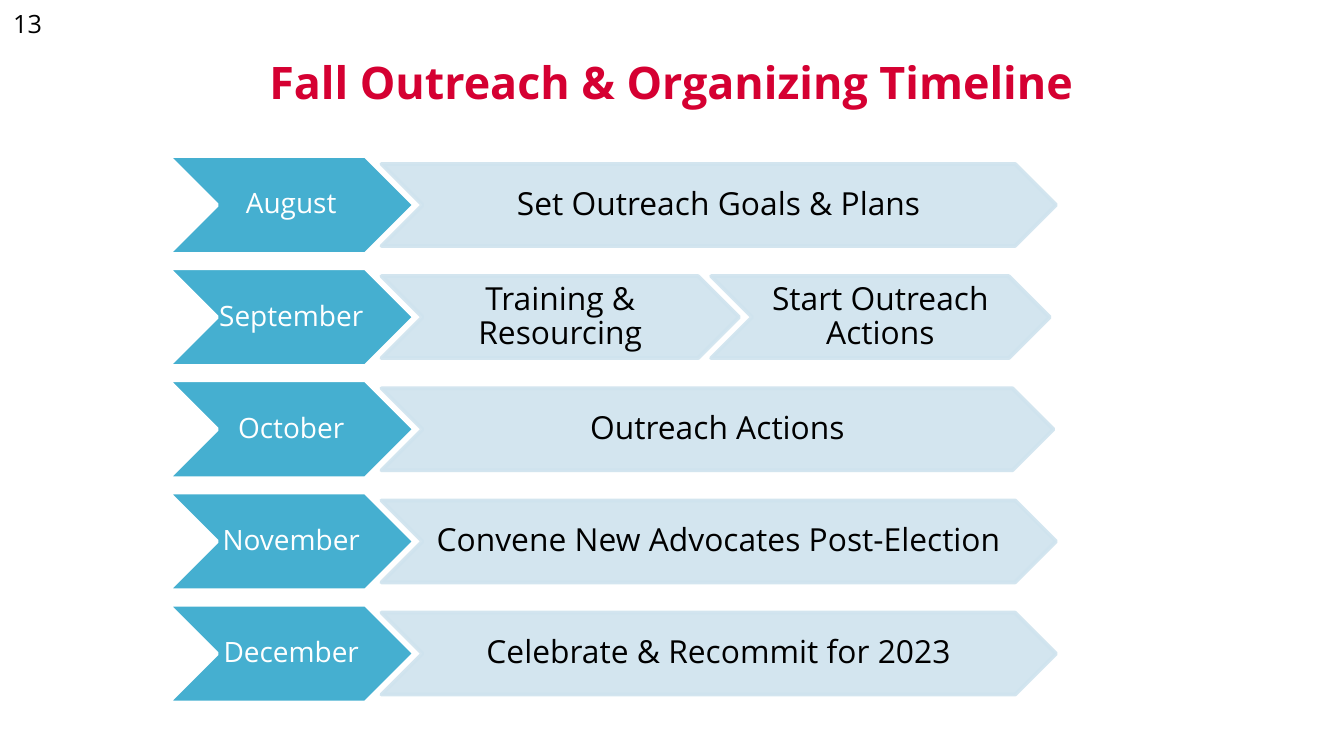
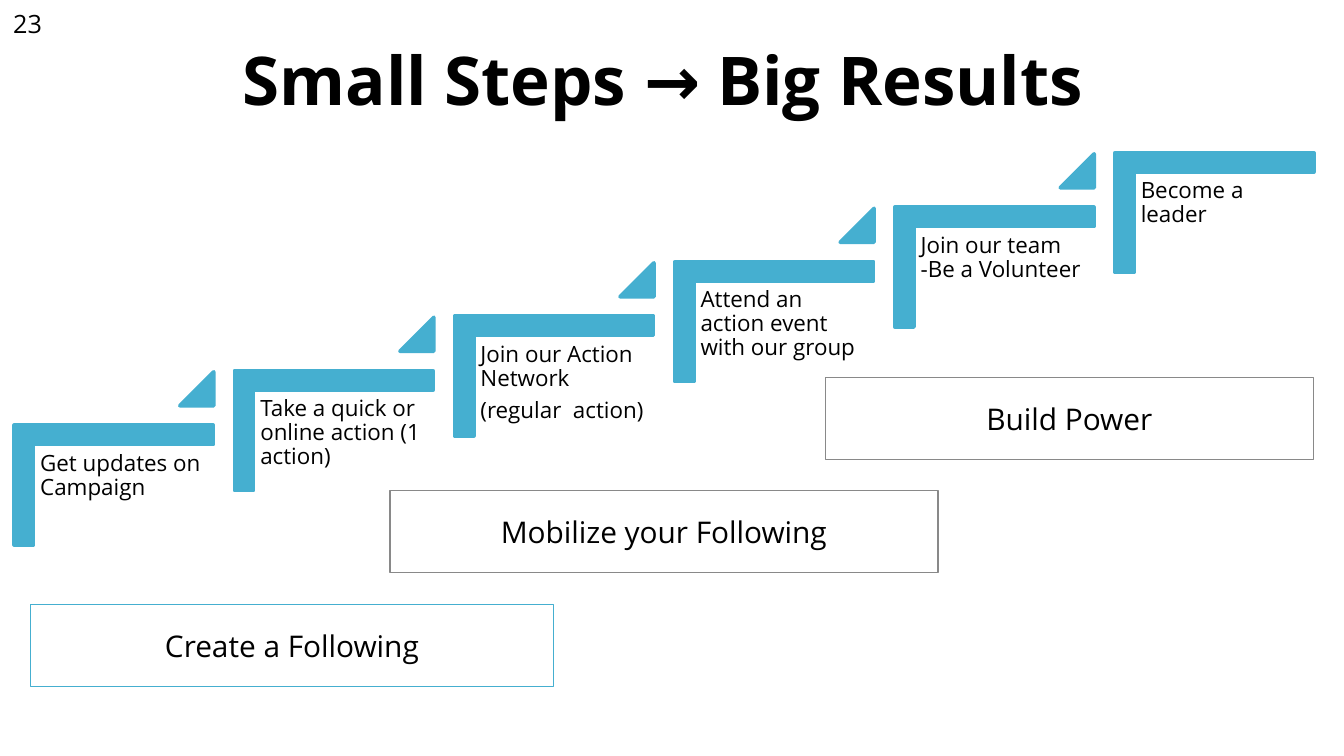
"""Build two slides: an outreach timeline and a staircase of engagement steps."""
from typing import NamedTuple

from lxml import etree
from pptx import Presentation
from pptx.dml.color import RGBColor
from pptx.enum.shapes import MSO_SHAPE
from pptx.enum.text import MSO_ANCHOR, PP_ALIGN
from pptx.oxml.ns import qn
from pptx.util import Cm, Pt

CHEVRON, CORNER = MSO_SHAPE.CHEVRON, MSO_SHAPE.CORNER
TRIANGLE, RECTANGLE = MSO_SHAPE.ISOSCELES_TRIANGLE, MSO_SHAPE.RECTANGLE
TOP, MIDDLE = MSO_ANCHOR.TOP, MSO_ANCHOR.MIDDLE
LEFT, CENTER = PP_ALIGN.LEFT, PP_ALIGN.CENTER

FONT = "Open Sans"
BLACK, WHITE, RED = "000000", "FFFFFF", "D50032"
BLUE, PALE_BLUE, GRAY = "45AFD0", "CFE3EE", "898989"
DEFAULT_INSETS = (0.25, 0.13, 0.25, 0.13)
CHEVRON_INSETS = (0, 0.03, 0, 0.03)
STEP_INSETS = (0.12, 0.12, 0.12, 0.12)


class Box(NamedTuple):
    """A rectangle in centimetres."""

    left: float
    top: float
    width: float
    height: float


class Activity(NamedTuple):
    """One activity of a month, with the width of its chevron."""

    label: str
    width: float


class Month(NamedTuple):
    """One row of the timeline."""

    name: str
    activities: tuple[Activity, ...]


class Stage(NamedTuple):
    """A framed caption below the staircase."""

    label: str
    box: Box
    line: str


MONTHS = (
    Month("August", (Activity("Set Outreach Goals & Plans", 12.75),)),
    Month("September", (Activity("Training & Resourcing", 6.76),
                        Activity("Start Outreach Actions", 6.4))),
    Month("October", (Activity("Outreach Actions", 12.7),)),
    Month("November", (Activity("Convene New Advocates Post-Election", 12.75),)),
    Month("December", (Activity("Celebrate & Recommit for 2023", 12.75),)),
)
STEPS = (
    "Get updates on Campaign",
    "Take a quick or online action (1 action)",
    "Join our Action Network\n(regular  action)",
    "Attend an action event with our group",
    "Join our team -Be a Volunteer",
    "Become a leader",
)
STAGES = (
    Stage("Create a Following", Box(0.58, 11.43, 9.88, 1.55), BLUE),
    Stage("Mobilize your Following", Box(7.37, 9.27, 10.36, 1.55), GRAY),
    Stage("Build Power", Box(15.6, 7.14, 9.22, 1.55), GRAY),
)


def rgb(value: str) -> RGBColor:
    """Turn a hex string into a colour."""
    return RGBColor.from_string(value)


def write_text(shape, text: str, *, size: float, color: str = BLACK, bold: bool = False,
               align=CENTER, anchor=MIDDLE, insets=DEFAULT_INSETS,
               line_spacing: float | None = None, space_after: float = 0) -> None:
    """Fill a shape with formatted text, one paragraph a line."""
    frame = shape.text_frame
    frame.word_wrap = True
    frame.vertical_anchor = anchor
    (frame.margin_left, frame.margin_top,
     frame.margin_right, frame.margin_bottom) = map(Cm, insets)
    frame.text = text
    for paragraph in frame.paragraphs:
        paragraph.alignment = align
        paragraph.line_spacing = line_spacing
        paragraph.space_after = Pt(space_after)
        font = paragraph.font
        font.name, font.size, font.bold = FONT, Pt(size), bold
        font.color.rgb = rgb(color)


def add_text(slide, box: Box, text: str, **text_format) -> None:
    """Add a text box."""
    write_text(slide.shapes.add_textbox(*map(Cm, box)), text, **text_format)


def add_outline(slide, kind, box: Box, *, fill: str | None, line: str,
                line_width: float = 2, opacity: int = 100):
    """Add a preset shape with its fill and line."""
    shape = slide.shapes.add_shape(kind, *map(Cm, box))
    shape.shadow.inherit = False
    if fill:
        shape.fill.solid()
        shape.fill.fore_color.rgb = rgb(fill)
    else:
        shape.fill.background()
    shape.line.color.rgb = rgb(line)
    shape.line.width = Pt(line_width)
    if opacity < 100:
        for color in shape.element.spPr.iter(qn("a:srgbClr")):
            etree.SubElement(color, qn("a:alpha"), val=str(opacity * 1000))
    return shape


def add_chevron(slide, box: Box, label: str, *, fill: str, line: str, opacity: int,
                size: float, color: str) -> None:
    """Add a chevron with its label between the two points."""
    add_outline(slide, CHEVRON, box, fill=fill, line=line, opacity=opacity)
    label_box = Box(box.left + box.height / 2, box.top, box.width - box.height, box.height)
    add_text(slide, label_box, label, size=size, color=color,
             insets=CHEVRON_INSETS, line_spacing=0.9)


def add_slide(presentation, number: int):
    """Add a blank slide with its page number."""
    slide = presentation.slides.add_slide(presentation.slide_layouts[6])
    add_text(slide, Box(0, 0.03, 1.14, 0.84), str(number), size=13.5, align=LEFT, anchor=TOP)
    return slide


def add_title(slide, left: float, top: float, text: str, size: float, color: str) -> None:
    """Add a bold centred title."""
    add_text(slide, Box(left, top, 21.87, 1.55), text, size=size, color=color, bold=True)


def build_timeline(presentation) -> None:
    """Build the slide with a row of chevrons for each month."""
    slide = add_slide(presentation, 13)
    add_title(slide, 1.75, 0.76, "Fall Outreach & Organizing Timeline", 24, RED)
    month_height, activity_height, overlap = 1.85, 1.55, 0.53
    for row, month in enumerate(MONTHS):
        top = 2.95 + 2.12 * row
        add_chevron(slide, Box(3.18, top, 4.65, month_height), month.name, fill=BLUE,
                    line=WHITE, opacity=100, size=15, color=WHITE)
        left = 7.21
        top += (month_height - activity_height) / 2
        for activity in month.activities:
            add_chevron(slide, Box(left, top, activity.width, activity_height),
                        activity.label, fill=PALE_BLUE, line=PALE_BLUE, opacity=90,
                        size=17, color=BLACK)
            left += activity.width - overlap


def build_staircase(presentation) -> None:
    """Build the slide with rising steps and three framed stages."""
    slide = add_slide(presentation, 23)
    for index, label in enumerate(STEPS):
        left, top = 1.02 + 4.16 * index, 7.29 - 1.03 * index
        corner = add_outline(slide, CORNER, Box(left, top, 2.26, 3.76), fill=BLUE, line=BLUE)
        corner.rotation = 90
        corner.adjustments[0] = corner.adjustments[1] = 0.16
        add_text(slide, Box(left - 0.38, top + 1.13, 3.4, 2.97), label, size=12,
                 align=LEFT, anchor=TOP, insets=STEP_INSETS, line_spacing=0.9,
                 space_after=4.2)
        if index < len(STEPS) - 1:
            triangle = add_outline(slide, TRIANGLE, Box(left + 2.38, top - 0.26, 0.64, 0.64),
                                   fill=BLUE, line=BLUE)
            triangle.adjustments[0] = 1
    add_title(slide, 1.6, 0.71, "Small Steps → Big Results", 36, BLACK)
    for stage in STAGES:
        shape = add_outline(slide, RECTANGLE, stage.box, fill=None, line=stage.line,
                            line_width=0.75)
        write_text(shape, stage.label, size=16)


def main() -> None:
    """Build and save the presentation."""
    presentation = Presentation()
    presentation.slide_width, presentation.slide_height = Cm(25.4), Cm(14.29)
    build_timeline(presentation)
    build_staircase(presentation)
    presentation.save("out.pptx")


if __name__ == "__main__":
    main()
